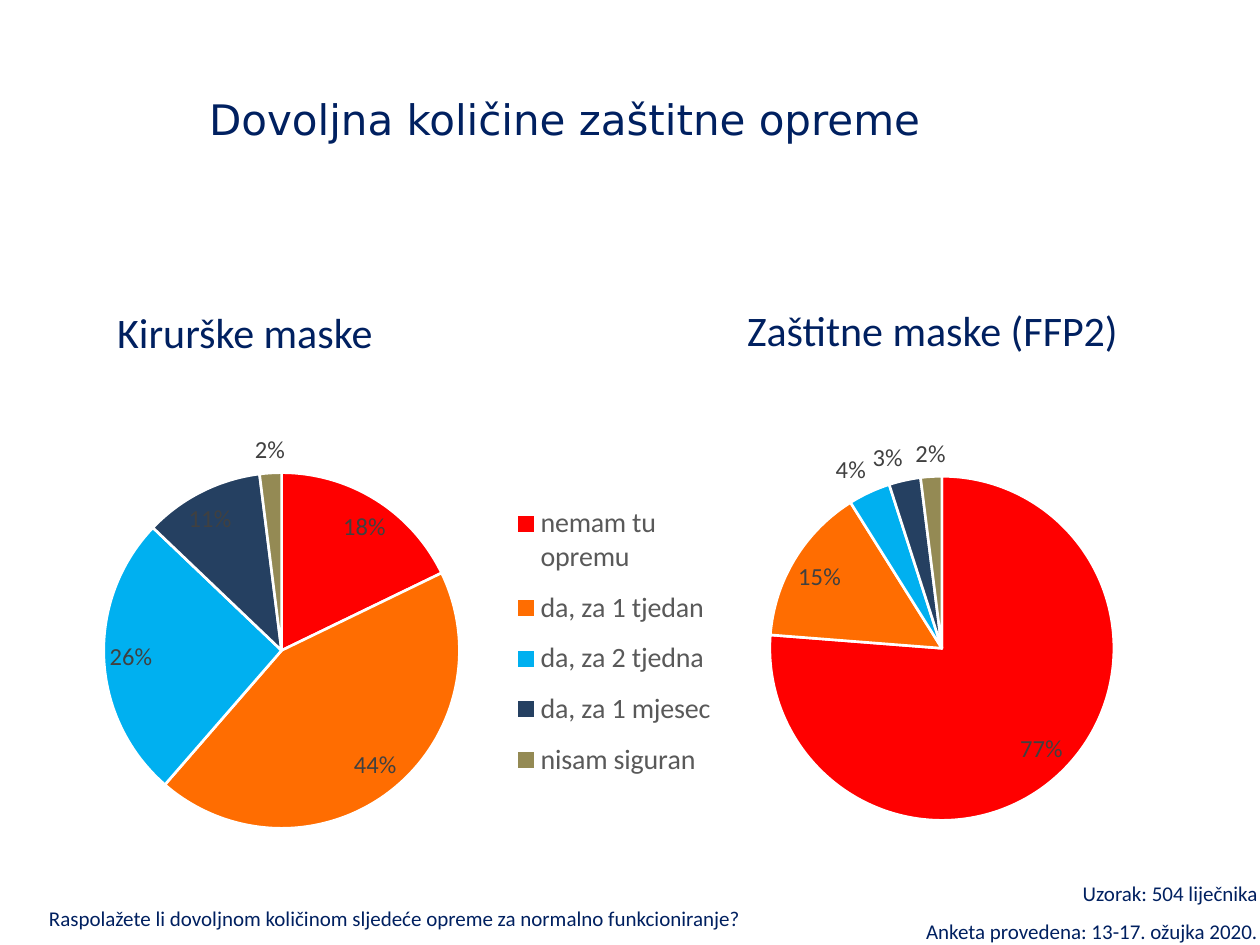
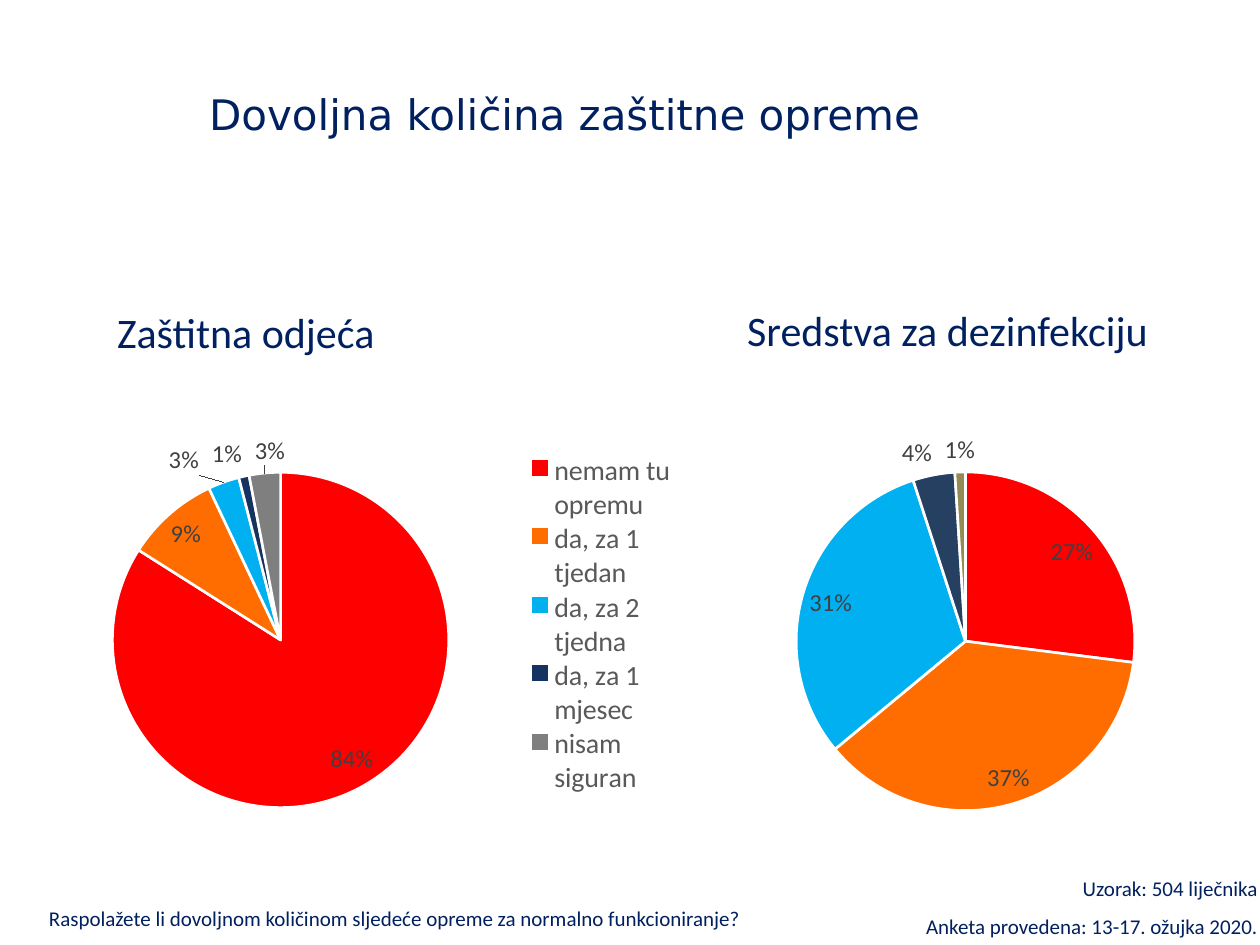
from pptx import Presentation
from pptx.chart.data import CategoryChartData
from pptx.dml.color import RGBColor
from pptx.enum.chart import XL_CHART_TYPE as ChartType
from pptx.enum.chart import XL_LABEL_POSITION as LabelPosition
from pptx.enum.chart import XL_LEGEND_POSITION as LegendPosition
from pptx.enum.text import MSO_ANCHOR as Anchor
from pptx.enum.text import PP_ALIGN as Align
from pptx.oxml import parse_xml
from pptx.oxml.ns import nsdecls
from pptx.util import Inches, Pt

COLORS = {
    "navy": "002060", "white": "FFFFFF", "black": "000000",
    "label": "404040", "legend": "595959",
    "red": "FF0000", "orange": "FF6D01", "sky": "00B0F0",
    "slate": "254061", "olive": "948A54", "ink": "163260", "gray": "7F7F7F",
}
STANDARD = ["red", "orange", "sky", "slate", "olive"]
ALTERNATE = ["red", "orange", "sky", "ink", "gray"]
ANSWERS = ["nemam tu opremu", "da, za 1 tjedan", "da, za 2 tjedna",
           "da, za 1 mjesec", "nisam siguran"]
NUMBERS = ["1", "2", "3", "4", "5"]
QUESTION = "Raspolažete li dovoljnom količinom sljedeće opreme za normalno funkcioniranje?"
SURVEY = ["Uzorak: 504 liječnika", "Anketa provedena: 13-17. ožujka 2020."]
HEADING_PLACES = [(0.83, 2.18, 4.42, 0.7), (5.83, 2.17, 4.25, 0.7)]

SLIDES = [
    {
        "title": "Dovoljna količine zaštitne opreme", "title_top": 0.49, "survey_top": 6.84,
        "pies": [
            {"heading": "Kirurške maske", "values": [18, 44, 26, 11, 2],
             "answers": ANSWERS, "palette": STANDARD, "place": (0.43, 2.27, 5.31, 4.63),
             "plot": (0.07, 0.32, 0.54, 0.61), "legend": (0.69, 0.35, 0.31, 0.52)},
            {"heading": "Zaštitne maske (FFP2)", "values": [77, 15, 4, 3, 2],
             "answers": NUMBERS, "palette": STANDARD, "place": (5.74, 2.16, 5.18, 4.63),
             "plot": (0.07, 0.35, 0.53, 0.59), "legend": None},
        ],
    },
    {
        "title": "Dovoljna količina zaštitne opreme", "title_top": 0.45, "survey_top": 6.8,
        "pies": [
            {"heading": "Zaštitna odjeća", "values": [84, 9, 3, 1, 3],
             "answers": ANSWERS, "palette": ALTERNATE, "place": (0.46, 3.42, 4.98, 3),
             "plot": (0.07, 0.11, 0.57, 0.89), "legend": (0.74, 0.06, 0.25, 0.91)},
            {"heading": "Sredstva za dezinfekciju", "values": [27, 37, 31, 4, 1],
             "answers": NUMBERS, "palette": STANDARD, "place": (5.86, 3.33, 3.37, 3.2),
             "plot": (0.13, 0.13, 0.81, 0.84), "legend": None},
        ],
    },
]


def rgb(name):
    return RGBColor.from_string(COLORS[name])


def set_font(font, size, color, name="Calibri"):
    font.size, font.name, font.bold = Pt(size), name, False
    font.color.rgb = rgb(color)


def write(box, lines, place, size=12, font="Calibri", align=Align.LEFT,
          anchor=Anchor.TOP, spacing=None):
    box.left, box.top, box.width, box.height = map(Inches, place)
    frame = box.text_frame
    frame.word_wrap = True
    frame.vertical_anchor = anchor
    for index, line in enumerate(lines):
        para = frame.add_paragraph() if index else frame.paragraphs[0]
        para.alignment = align
        if spacing:
            para.line_spacing = spacing
        span = para.add_run()
        span.text = line
        set_font(span.font, size, "navy", font)


def manual_layout(place, inner=False):
    target = '<c:layoutTarget val="inner"/>' if inner else ""
    modes = "".join(f'<c:{axis}Mode val="edge"/>' for axis in "xy")
    sizes = "".join(f'<c:{key} val="{value}"/>' for key, value in zip("xywh", place))
    return parse_xml(f'<c:layout {nsdecls("c")}><c:manualLayout>{target}{modes}{sizes}'
                     '</c:manualLayout></c:layout>')


def add_pie(slide, pie):
    data = CategoryChartData()
    data.categories = pie["answers"]
    data.add_series("Series 1", pie["values"])
    chart = slide.shapes.add_chart(ChartType.PIE, *map(Inches, pie["place"]), data).chart
    chart.has_title = False
    set_font(chart.font, 10, "black")

    plot = chart.plots[0]
    plot.vary_by_categories = True
    for index, color in enumerate(pie["palette"]):
        wedge = plot.series[0].points[index].format
        wedge.fill.solid()
        wedge.fill.fore_color.rgb = rgb(color)
        wedge.line.color.rgb = rgb("white")
        wedge.line.width = Pt(1.5)

    labels = plot.series[0].data_labels
    labels.show_value = True
    labels.number_format = '0"%"'
    labels.number_format_is_linked = False
    labels.position = LabelPosition.BEST_FIT
    set_font(labels.font, 14, "label")

    area = chart.element.chart.plotArea
    for layout in area.findall("{*}layout"):
        area.remove(layout)
    area.insert(0, manual_layout(pie["plot"], inner=True))

    chart.has_legend = pie["legend"] is not None
    if chart.has_legend:
        legend = chart.legend
        legend.position = LegendPosition.RIGHT
        legend.include_in_layout = False
        set_font(legend.font, 16, "legend")
        element = chart.element.chart.find("{*}legend")
        for layout in element.findall("{*}layout"):
            element.remove(layout)
        element.find("{*}legendPos").addnext(manual_layout(pie["legend"]))


def add_text_box(slide, lines, place, **style):
    write(slide.shapes.add_textbox(0, 0, 0, 0), lines, place, **style)


def add_slide(deck, content):
    slide = deck.slides.add_slide(deck.slide_layouts.get_by_name("Comparison"))
    holders = {holder.placeholder_format.idx: holder for holder in slide.placeholders}
    write(holders[0], [content["title"]], (1.56, content["title_top"], 7.94, 1.25),
          size=24, font="DejaVu Sans", spacing=1.5)
    for index, pie, place in zip((1, 3), content["pies"], HEADING_PLACES):
        write(holders[index], [pie["heading"]], place, size=24, anchor=Anchor.BOTTOM)
        add_pie(slide, pie)
    for index in (2, 4):
        element = holders[index].element
        element.getparent().remove(element)
    add_text_box(slide, SURVEY, (6.3, content["survey_top"], 3.78, 0.71),
                 align=Align.RIGHT, spacing=1.5)
    add_text_box(slide, [QUESTION], (0.29, 7.14, 5.77, 0.3))


def main():
    deck = Presentation()
    deck.slide_width, deck.slide_height = Inches(10), Inches(7.5)
    for content in SLIDES:
        add_slide(deck, content)
    deck.save("out.pptx")


if __name__ == "__main__":
    main()
